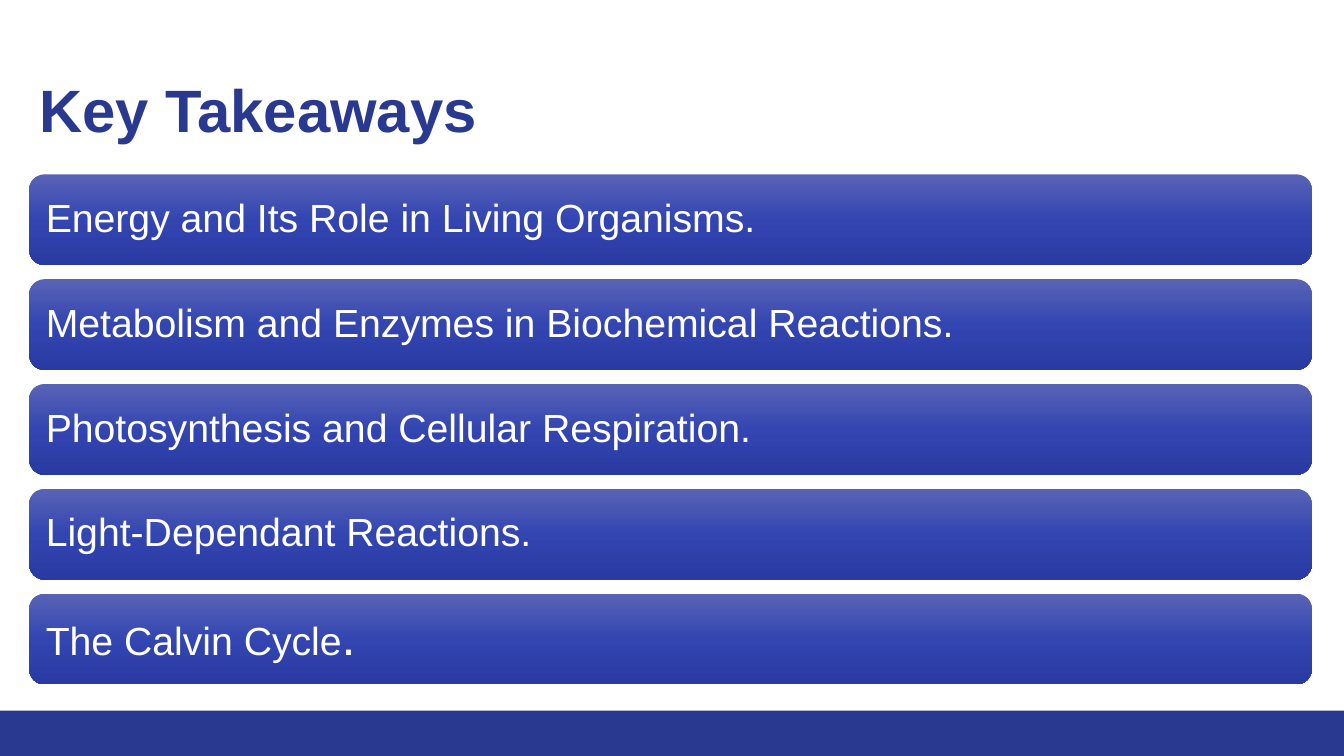
from copy import deepcopy
from dataclasses import dataclass

from pptx import Presentation
from pptx import util as u
from pptx.dml.color import RGBColor
from pptx.enum import shapes, text
from pptx.oxml.ns import qn


@dataclass(frozen=True)
class Theme:
    font: str = "Arial"
    navy: str = "2A3990"
    white: str = "FFFFFF"
    shades: tuple = ((0, "5963B6"), (0.5, "3345B1"), (1, "293AA2"))
    title: float = 42.7
    body: float = 28
    stop: float = 36


THEME = Theme()
WIDE, HIGH = 13.33, 7.5
LEFT = 0.29
POINTS = [
    ["Energy and Its Role in Living Organisms."],
    ["Metabolism and Enzymes in Biochemical Reactions."],
    ["Photosynthesis and Cellular Respiration."],
    ["Light-Dependant Reactions."],
    ["The Calvin Cycle", "."],
]


def inches(box):
    return [u.Inches(n) for n in box]


def style(run, size, color, bold=False):
    font = run.font
    font.name, font.size, font.bold = THEME.font, u.Pt(size), bold
    font.color.rgb = RGBColor.from_string(color)


def block(slide, kind, box):
    """Add a shape without line or shadow."""
    shape = slide.shapes.add_shape(kind, *inches(box))
    shape.shadow.inherit = False
    shape.line.fill.background()
    return shape


def shade(shape):
    """Fill a shape with the three-stop vertical gradient."""
    fill = shape.fill
    fill.gradient()
    fill.gradient_angle = 270
    stops = shape.element.spPr.find(".//" + qn("a:gsLst"))
    stops.append(deepcopy(stops[0]))
    for stop, (place, color) in zip(fill.gradient_stops, THEME.shades):
        stop.position = place
        stop.color.rgb = RGBColor.from_string(color)


def footer(slide, box):
    band = block(slide, shapes.MSO_SHAPE.RECTANGLE, box)
    band.fill.solid()
    band.fill.fore_color.rgb = RGBColor.from_string(THEME.navy)


def heading(slide, box, words):
    frame = slide.shapes.add_textbox(*inches(box)).text_frame
    frame.word_wrap = True
    frame.vertical_anchor = text.MSO_ANCHOR.MIDDLE
    frame.text = words
    line = frame.paragraphs[0]
    line.line_spacing = 0.9
    style(line.runs[0], THEME.title, THEME.navy, bold=True)


def bar(slide, box, parts):
    """Add one rounded bar; any part after the first is set larger."""
    shape = block(slide, shapes.MSO_SHAPE.ROUNDED_RECTANGLE, box)
    shade(shape)
    frame = shape.text_frame
    frame.word_wrap = True
    frame.vertical_anchor = text.MSO_ANCHOR.MIDDLE
    frame.margin_left = frame.margin_right = u.Inches(0.12)
    frame.margin_top = frame.margin_bottom = u.Inches(0.12)
    line = frame.paragraphs[0]
    line.alignment = text.PP_ALIGN.LEFT
    line.line_spacing = 0.9
    for i, part in enumerate(parts):
        run = line.add_run()
        run.text = part
        style(run, THEME.stop if i else THEME.body, THEME.white)


def bars(slide, box, points, gap=0.14):
    """Stack equal bars down the box."""
    left, top, wide, high = box
    step = (high + gap) / len(points)
    for row, parts in enumerate(points):
        bar(slide, (left, top + row * step, wide, step - gap), parts)


def main():
    deck = Presentation()
    deck.slide_width, deck.slide_height = inches((WIDE, HIGH))
    slide = deck.slides.add_slide(deck.slide_layouts[6])
    footer(slide, (0, HIGH * 0.94, WIDE, HIGH * 0.06))
    heading(slide, (LEFT, 0.4, 12.69, 1.45), "Key Takeaways")
    bars(slide, (LEFT, 1.73, 12.72, 5.06), POINTS)
    deck.save("out.pptx")


if __name__ == "__main__":
    main()
